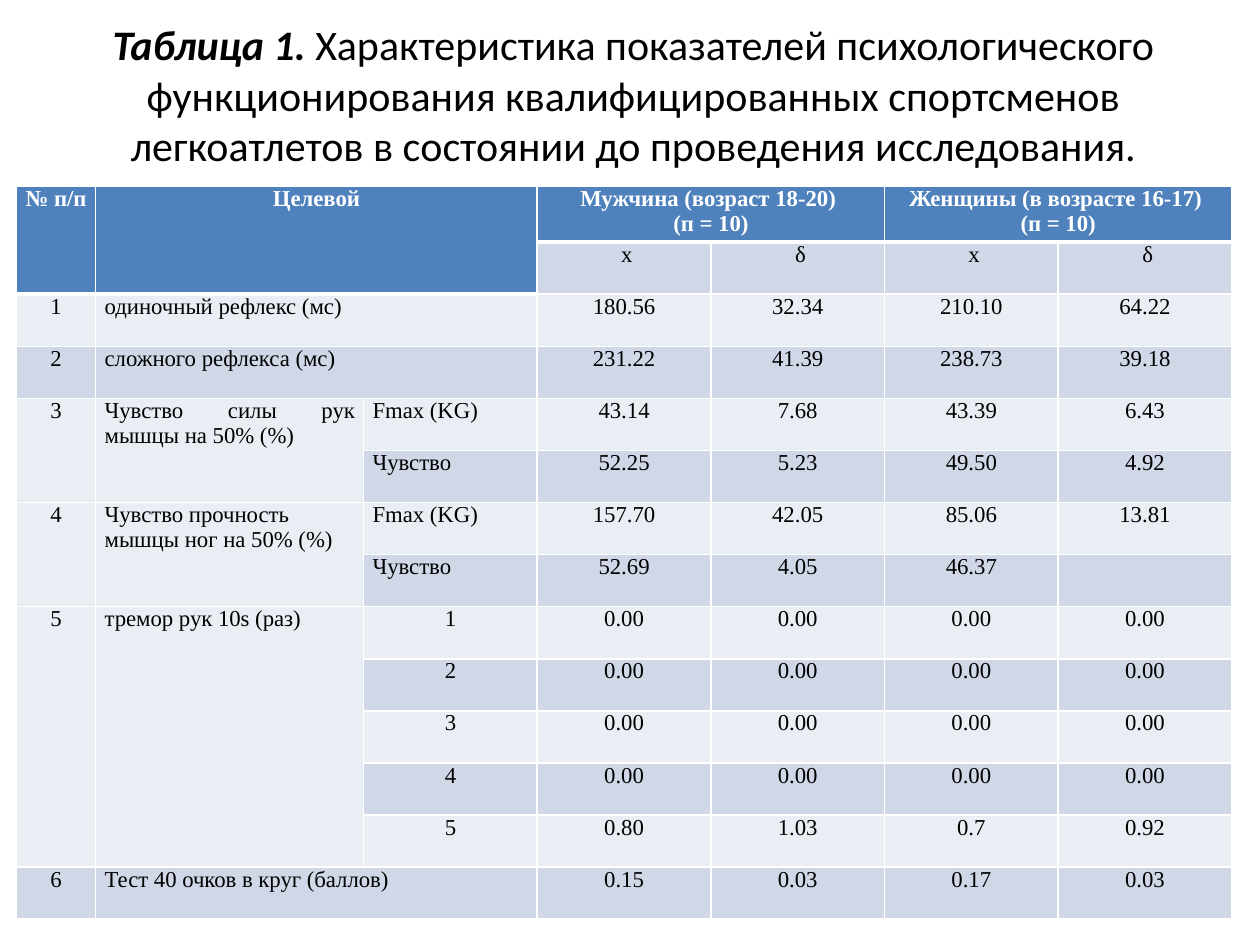
from lxml import etree
from pptx import Presentation
from pptx.dml.color import RGBColor
from pptx.enum import text
from pptx.oxml import ns
from pptx.util import Cm, Pt

BLACK = RGBColor(0, 0, 0)
WHITE = RGBColor(255, 255, 255)
HEADER_BLUE = RGBColor(0x4F, 0x81, 0xBD)
BAND_DARK = RGBColor(0xD0, 0xD8, 0xE8)
BAND_LIGHT = RGBColor(0xE9, 0xED, 0xF4)
CENTER = text.PP_ALIGN.CENTER
JUSTIFY = text.PP_ALIGN.JUSTIFY


def add_text(paragraph, content, font="Times New Roman", size=13, color=BLACK,
             bold=False, italic=False, align=CENTER):
    paragraph.alignment = align
    run = paragraph.add_run()
    run.text = content
    run.font.name = font
    run.font.size = Pt(size)
    run.font.bold = bold
    run.font.italic = italic
    run.font.color.rgb = color


def add_border(cell, side, width):
    properties = cell._tc.get_or_add_tcPr()
    line = etree.SubElement(properties, ns.qn(f"a:ln{side}"), w=str(Pt(width)))
    fill = etree.SubElement(line, ns.qn("a:solidFill"))
    etree.SubElement(fill, ns.qn("a:srgbClr"), val=str(WHITE))


presentation = Presentation()
presentation.slide_width = Cm(25.4)
presentation.slide_height = Cm(19.05)
slide = presentation.slides.add_slide(presentation.slide_layouts[6])

title = slide.shapes.add_textbox(Cm(0.69), Cm(0.36), Cm(24.16), Cm(3.08))
title.text_frame.word_wrap = True
title.text_frame.vertical_anchor = text.MSO_ANCHOR.MIDDLE
title_paragraph = title.text_frame.paragraphs[0]
add_text(title_paragraph, "Таблица 1. ", font="Calibri", size=24, bold=True, italic=True)
add_text(title_paragraph, "Характеристика показателей психологического функционирования "
         "квалифицированных спортсменов легкоатлетов в состоянии до проведения исследования.",
         font="Calibri", size=24)

ROWS = [
    ["№ п/п", "Целевой", "", "Мужчина (возраст 18-20) \n(п = 10)", "",
     "Женщины (в возрасте 16-17) \n(п = 10)", ""],
    ["", "", "", " x", " δ", " x", " δ"],
    ["1", "одиночный рефлекс (мс)", "", "180.56", "32.34", "210.10", "64.22"],
    ["2", "сложного рефлекса (мс)", "", "231.22", "41.39", "238.73", "39.18"],
    ["3", "Чувство силы рук мышцы на 50% (%)", "Fmax (KG)", "43.14", "7.68", "43.39", "6.43"],
    ["", "", "Чувство", "52.25", "5.23", "49.50", "4.92"],
    ["4", "Чувство прочность \nмышцы ног на 50% (%)", "Fmax (KG)",
     "157.70", "42.05", "85.06", "13.81"],
    ["", "", "Чувство", "52.69", "4.05", "46.37", ""],
    ["5", "тремор рук 10s (раз)", "1", "0.00", "0.00", "0.00", "0.00"],
    ["", "", "2", "0.00", "0.00", "0.00", "0.00"],
    ["", "", "3", "0.00", "0.00", "0.00", "0.00"],
    ["", "", "4", "0.00", "0.00", "0.00", "0.00"],
    ["", "", "5", "0.80", "1.03", "0.7", "0.92"],
    ["6", "Тест 40 очков в круг (баллов)", "", "0.15", "0.03", "0.17", "0.03"],
]
COLUMN_WIDTHS = [1.6, 5.4] + [3.5] * 5
ROW_HEIGHTS = [1.12] + [1.05] * 13
MERGES = [(0, 0, 1, 0), (0, 1, 1, 2), (0, 3, 0, 4), (0, 5, 0, 6),
          (2, 1, 2, 2), (3, 1, 3, 2), (13, 1, 13, 2),
          (4, 0, 5, 0), (4, 1, 5, 1), (6, 0, 7, 0), (6, 1, 7, 1),
          (8, 0, 12, 0), (8, 1, 12, 1)]

frame = slide.shapes.add_table(len(ROWS), len(COLUMN_WIDTHS), Cm(0.33), Cm(3.76),
                               Cm(sum(COLUMN_WIDTHS)), Cm(sum(ROW_HEIGHTS)))
table = frame.table
for column, width in zip(table.columns, COLUMN_WIDTHS):
    column.width = Cm(width)
for row, height in zip(table.rows, ROW_HEIGHTS):
    row.height = Cm(height)
for top, left, bottom, right in MERGES:
    table.cell(top, left).merge(table.cell(bottom, right))

for row_index, row_texts in enumerate(ROWS):
    for column_index, content in enumerate(row_texts):
        cell = table.cell(row_index, column_index)
        header_depth = 2 if column_index < 3 else 1
        is_header = row_index < header_depth
        cell.margin_left = cell.margin_right = Cm(0.18)
        cell.margin_top = cell.margin_bottom = 0
        add_border(cell, "L", 1)
        add_border(cell, "R", 1)
        add_border(cell, "T", 3 if row_index == header_depth else 1)
        add_border(cell, "B", 3 if is_header else 1)
        cell.fill.solid()
        band = BAND_DARK if row_index % 2 else BAND_LIGHT
        cell.fill.fore_color.rgb = HEADER_BLUE if is_header else band
        if not content:
            continue
        is_label = column_index in (1, 2) and not content.isdigit() and not is_header
        for line_index, line_text in enumerate(content.split("\n")):
            text_frame = cell.text_frame
            paragraph = text_frame.add_paragraph() if line_index else text_frame.paragraphs[0]
            add_text(paragraph, line_text, bold=is_header,
                     color=WHITE if is_header else BLACK,
                     align=JUSTIFY if is_label else CENTER)

presentation.save("out.pptx")
